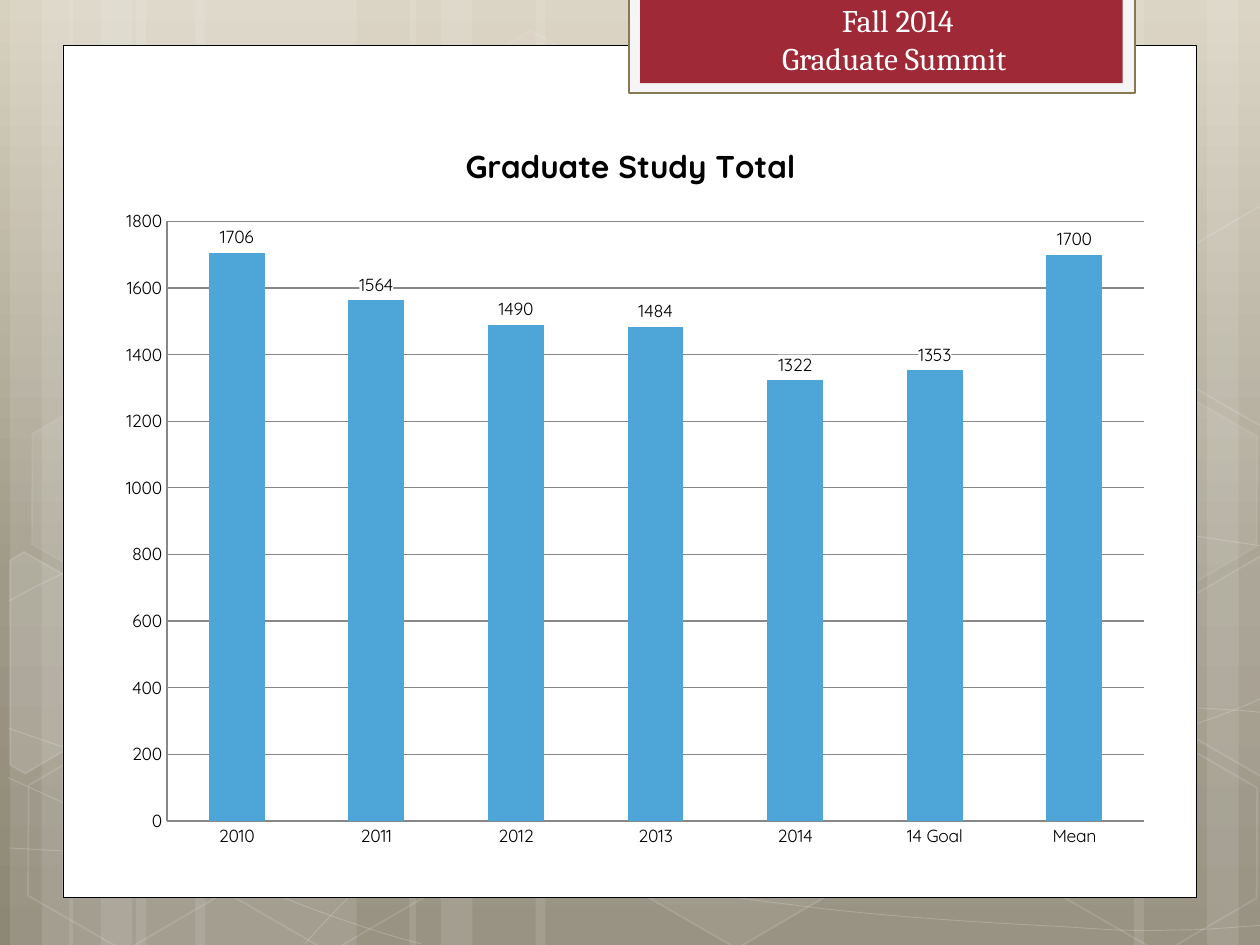
from copy import deepcopy

from lxml import etree
from pptx import Presentation
from pptx import util as u
from pptx.chart import data as chart_data
from pptx.dml.color import RGBColor
from pptx.enum import chart as charts, shapes, text
from pptx.oxml import parse_xml
from pptx.oxml.ns import nsdecls, qn

WHITE = RGBColor(0xFF, 0xFF, 0xFF)
BLACK = RGBColor(0, 0, 0)
SAND = RGBColor(0xD8, 0xD1, 0xC0)
STONE = RGBColor(0x9F, 0x99, 0x88)
EARTH = RGBColor(0x8E, 0x87, 0x76)
FRAME = RGBColor(0xF5, 0xF5, 0xF5)
BRONZE = RGBColor(0x88, 0x79, 0x52)
CRIMSON = RGBColor(0x9F, 0x29, 0x36)
BLUE = RGBColor(0x4E, 0xA5, 0xD8)
GRID = RGBColor(0x87, 0x87, 0x87)

BANDS = [
    (1.08, 1.75, 0), (0.08, 0.5, 0), (0.33, 0.83, 0), (1.55, 1.75, 0), (0.55, 0.5, 0),
    (0.8, 0.83, 0), (7.33, 1.75, 180), (9.58, 0.5, 180), (9, 0.83, 180), (4.25, 3.08, 0),
    (3.25, 0.5, 0), (3.5, 0.83, 0),
]
CURVES = [
    [(0.07, 6.73), (0.61, 6.76), (1.15, 6.79), (1.9, 6.78), (2.65, 6.77), (3.58, 6.75),
     (4.58, 6.65), (5.58, 6.55), (7, 6.36), (7.92, 6.17), (8.83, 5.98), (9.77, 5.68),
     (10.07, 5.51)],
    [(0.07, 4.77), (0.36, 4.61), (0.65, 4.46), (1.21, 4.31), (1.78, 4.16), (2.59, 3.94),
     (3.47, 3.87), (4.36, 3.8), (5.44, 3.79), (6.54, 3.87), (7.64, 3.95), (9.47, 4.26),
     (10.07, 4.34)],
    [(0.06, 6.17), (1.27, 6.72), (2.47, 7.27), (3.34, 7.49)],
    [(0.07, 5.78), (0.38, 5.89), (0.7, 6), (1.28, 6.16), (1.86, 6.31), (2.73, 6.56),
     (3.57, 6.73), (4.4, 6.9), (5.45, 7.08), (6.28, 7.18), (7.11, 7.29), (8, 7.33),
     (8.53, 7.36), (9.05, 7.4), (9.19, 7.38), (9.45, 7.38), (9.71, 7.37), (9.89, 7.35),
     (10.07, 7.34)],
    [(2.42, 7.49), (2.6, 7.29), (2.78, 7.09), (3.02, 6.91), (3.26, 6.73), (3.6, 6.53),
     (3.88, 6.39), (4.16, 6.25), (4.33, 6.19), (4.7, 6.09), (5.06, 5.99), (5.73, 5.85),
     (6.08, 5.78), (6.44, 5.71), (6.49, 5.71), (6.8, 5.69), (7.11, 5.66), (7.6, 5.63),
     (7.94, 5.62), (8.29, 5.61), (8.86, 5.62), (8.86, 5.62), (9.08, 5.62), (9.3, 5.62),
     (9.53, 5.62), (9.71, 5.63), (9.88, 5.64), (9.97, 5.65), (10.06, 5.66), (10.03, 5.65),
     (10.06, 5.66)],
]
HEXAGONS = [
    (3.34, 0.36, 4, 8), (4.97, 5.89, 6, 12), (0.11, 5.91, 0, 12), (0.14, 3.12, 7, 8),
    (1.74, 5.92, 0, 12), (7.53, 4.53, 10, 12), (8.34, 5.93, 0, 12), (8.34, 3.14, 7, 8),
]
CUT_HEXAGONS = [
    ([(0.08, 4.45), (0.19, 4.38), (0.96, 4.82), (0.95, 5.7), (0.2, 6.14), (0.08, 6.07)], 10),
    ([(9.26, 4.85), (10.01, 4.41), (10.09, 4.46), (10.09, 6.13), (10.02, 6.17), (9.26, 5.73)], 4),
    ([(9.26, 2.07), (10.01, 1.63), (10.1, 1.68), (10.09, 3.35), (10.02, 3.39), (9.26, 2.95)], 0),
]


def set_opacity(fill, percent):
    color = fill._xPr.find(qn("a:solidFill"))[0]
    etree.SubElement(color, qn("a:alpha")).set("val", str(percent * 1000))


def paint(shape, fill=None, opacity=100, line=None, width=1, line_opacity=100):
    shape.shadow.inherit = False
    if fill is None or opacity == 0:
        shape.fill.background()
    else:
        shape.fill.solid()
        shape.fill.fore_color.rgb = fill
        if opacity < 100:
            set_opacity(shape.fill, opacity)
    if line is None:
        shape.line.fill.background()
    else:
        shape.line.color.rgb = line
        shape.line.width = u.Pt(width)
        if line_opacity < 100:
            set_opacity(shape.line.fill, line_opacity)


def add_block(parent, kind, left, top, width, height):
    return parent.shapes.add_shape(kind, *map(u.Inches, (left, top, width, height)))


def add_outline(parent, left, top, points, close):
    placed = [(u.Inches(left + x), u.Inches(top + y)) for x, y in points]
    builder = parent.shapes.build_freeform(*placed[0])
    builder.add_line_segments(placed[1:], close=close)
    return builder.convert_to_shape()


def add_curve(parent, left, top, controls):
    curve = add_outline(parent, left, top, controls, False)
    segments = list(curve._element.iter(qn("a:lnTo")))
    for start in range(0, len(segments), 3):
        bend = etree.Element(qn("a:cubicBezTo"))
        segments[start].addprevious(bend)
        for segment in segments[start:start + 3]:
            bend.append(segment[0])
            segment.getparent().remove(segment)
    return curve


def add_backdrop(slide, left, top, height):
    fill = slide.background.fill
    fill.gradient()
    fill.gradient_angle = 270
    first = fill.gradient_stops[0]._gs
    first.addnext(deepcopy(first))
    for stop, color, position in zip(fill.gradient_stops, (SAND, STONE, EARTH), (0, 0.62, 1)):
        stop.color.rgb = color
        stop.position = position

    pattern = slide.shapes.add_group_shape()
    for x, width, rotation in BANDS:
        band = add_block(pattern, shapes.MSO_SHAPE.RECTANGLE, left + x, top, width, height)
        band.rotation = rotation
        paint(band, WHITE, 10)
    for controls in CURVES:
        curve = add_curve(pattern, left, top, controls)
        paint(curve, line=WHITE, width=0.5, line_opacity=20)
    for x, y, opacity, line_opacity in HEXAGONS:
        hexagon = add_block(pattern, shapes.MSO_SHAPE.HEXAGON, left + x, top + y, 1.75, 1.52)
        hexagon.rotation = 30
        hexagon.adjustments[0] = 0.285
        hexagon.adjustments[1] = 1.155
        paint(hexagon, WHITE, opacity, WHITE, 1, line_opacity)
    for points, opacity in CUT_HEXAGONS:
        paint(add_outline(pattern, left, top, points, True), WHITE, opacity, WHITE, 1, 12)


def add_panel(slide, left, top, width, height):
    panel = add_block(slide, shapes.MSO_SHAPE.RECTANGLE, left, top, width, height)
    paint(panel, WHITE, line=BLACK, width=0.5)


def add_banner(slide, left, top, width, height):
    rectangle = shapes.MSO_SHAPE.RECTANGLE
    paint(add_block(slide, rectangle, left, top, width, height), FRAME, line=BRONZE, width=1.25)
    paint(add_block(slide, rectangle, left + 0.09, top, width - 0.19, height - 0.08), CRIMSON)
    heading = slide.shapes.add_textbox(
        *map(u.Inches, (left + 0.26, top - 0.02, width - 0.27, height - 0.05)))
    frame = heading.text_frame
    frame.word_wrap = True
    frame.auto_size = text.MSO_AUTO_SIZE.SHAPE_TO_FIT_TEXT
    frame.text = "Fall 2014\nGraduate Summit "
    for paragraph in frame.paragraphs:
        paragraph.alignment = text.PP_ALIGN.CENTER
        font = paragraph.runs[0].font
        font.name = "Cambria"
        font.size = u.Pt(18)
        font.color.rgb = WHITE


def add_totals_chart(slide, left, top, width, height):
    totals = chart_data.CategoryChartData()
    totals.categories = ["2010", "2011", "2012", "2013", "2014", "14 Goal", "Mean"]
    totals.add_series("Series 1", [1706, 1564, 1490, 1484, 1322, 1353, 1700])
    chart = slide.shapes.add_chart(
        charts.XL_CHART_TYPE.COLUMN_CLUSTERED,
        *map(u.Inches, (left, top, width, height)), totals).chart
    chart.has_legend = False
    chart.font.name = "Quicksand"
    chart.font.size = u.Pt(10)
    chart.font.color.rgb = BLACK

    chart.has_title = True
    chart.chart_title.include_in_layout = False
    chart.chart_title.text_frame.text = "Graduate Study Total "
    title_font = chart.chart_title.text_frame.paragraphs[0].runs[0].font
    title_font.name = "Quicksand"
    title_font.size = u.Pt(18)
    title_font.bold = True
    title_font.color.rgb = BLACK

    for axis in (chart.category_axis, chart.value_axis):
        axis.major_tick_mark = charts.XL_TICK_MARK.NONE
        axis.format.line.color.rgb = GRID
    scale = chart.value_axis
    scale.has_major_gridlines = True
    scale.major_gridlines.format.line.color.rgb = GRID

    plot = chart.plots[0]
    plot.gap_width = 150
    plot.vary_by_categories = False
    columns = plot.series[0]
    columns.format.fill.solid()
    columns.format.fill.fore_color.rgb = BLUE
    labels = columns.data_labels
    labels.show_value = True
    labels.position = charts.XL_LABEL_POSITION.OUTSIDE_END
    labels.font.name = "Quicksand"
    labels.font.size = u.Pt(10)
    labels.font.color.rgb = BLACK
    labels._element.find(qn("c:txPr")).addprevious(parse_xml(
        f'<c:spPr {nsdecls("c", "a")}><a:solidFill><a:srgbClr val="{WHITE}"/>'
        "</a:solidFill></c:spPr>"))


def main():
    deck = Presentation()
    deck.slide_width, deck.slide_height = u.Inches(10), u.Inches(7.5)
    slide = deck.slides.add_slide(deck.slide_layouts[6])
    add_backdrop(slide, 0, 0, 7.5)
    add_panel(slide, 0.5, 0.36, 9, 6.76)
    add_banner(slide, 4.99, -0.02, 4.02, 0.76)
    add_totals_chart(slide, 0.83, 0.92, 8.42, 5.92)
    deck.save("out.pptx")


if __name__ == "__main__":
    main()
